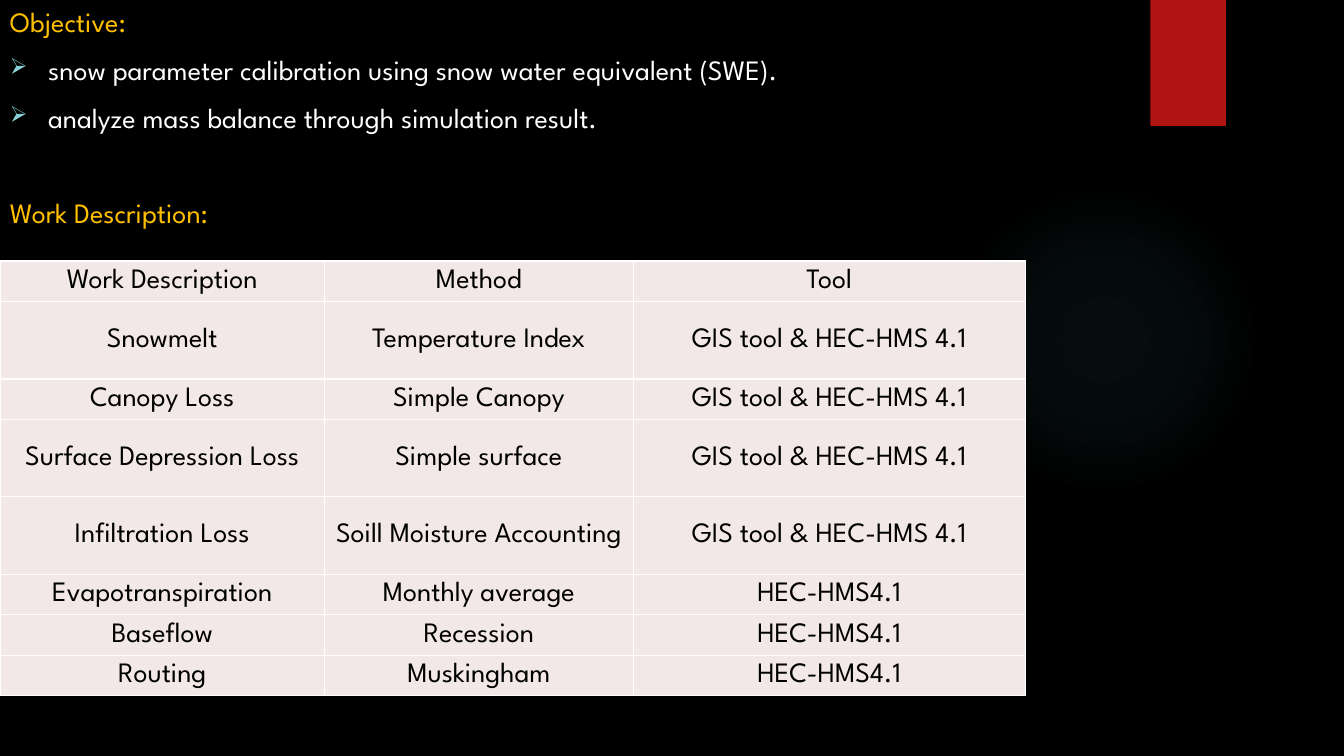
from dataclasses import dataclass

from pptx import Presentation
from pptx.dml.color import RGBColor
from pptx.enum.shapes import MSO_SHAPE
from pptx.enum.text import MSO_ANCHOR, PP_ALIGN
from pptx.oxml import parse_xml
from pptx.oxml.ns import nsdecls
from pptx.util import Emu, Pt

PX = 9144
FONT = "League Spartan"
TEXT_SIZE = Pt(20)
BLACK = RGBColor(0x00, 0x00, 0x00)
WHITE = RGBColor(0xFF, 0xFF, 0xFF)
GOLD = RGBColor(0xFF, 0xC0, 0x00)
RED = RGBColor(0xB0, 0x15, 0x13)
TEAL = RGBColor(0x50, 0xB9, 0xC1)
PALE_TEAL = RGBColor(0x8A, 0xD0, 0xD6)
PALE_ROSE = RGBColor(0xF2, 0xE8, 0xE7)
ELLIPSE = MSO_SHAPE.OVAL
RECTANGLE = MSO_SHAPE.RECTANGLE
CENTER = PP_ALIGN.CENTER
MIDDLE = MSO_ANCHOR.MIDDLE

BULLET_INDENT = 38
CELL_MARGIN = 1
COLUMN_WIDTHS = (322, 306, 389)
LOW_ROW, HIGH_ROW = 40, 77
GLOW_STOPS = ((0, 7), (36, 6), (69, 0))
MAPPED_TOOL = "GIS tool & HEC-HMS 4.1"
MODEL_TOOL = "HEC-HMS4.1"


@dataclass
class Line:
    text: str
    color: RGBColor
    space_before: int
    bulleted: bool = False


@dataclass
class Task:
    description: str
    method: str
    tool: str
    height: int = LOW_ROW


LINES = (
    Line("Objective:", GOLD, 0),
    Line("snow parameter calibration using snow water equivalent (SWE).", WHITE, 10, True),
    Line("analyze mass balance through simulation result.", WHITE, 10, True),
    Line("Work Description:", GOLD, 44),
)
TASKS = (
    Task("Work Description", "Method", "Tool"),
    Task("Snowmelt", "Temperature Index", MAPPED_TOOL, HIGH_ROW),
    Task("Canopy Loss", "Simple Canopy", MAPPED_TOOL),
    Task("Surface Depression Loss", "Simple surface", MAPPED_TOOL, HIGH_ROW),
    Task("Infiltration Loss", "Soill Moisture Accounting", MAPPED_TOOL, HIGH_ROW),
    Task("Evapotranspiration", "Monthly average", MODEL_TOOL),
    Task("Baseflow", "Recession", MODEL_TOOL),
    Task("Routing", "Muskingham", MODEL_TOOL),
)


def px(length: int) -> Emu:
    return Emu(length * PX)


def add_span(para, text: str, color: RGBColor) -> None:
    span = para.add_run()
    span.text = text
    span.font.name = FONT
    span.font.size = TEXT_SIZE
    span.font.color.rgb = color


def add_plain_shape(page, kind, left: int, top: int, width: int, height: int):
    shape = page.shapes.add_shape(kind, px(left), px(top), px(width), px(height))
    shape.shadow.inherit = False
    shape.line.fill.background()
    return shape


def add_glow(page) -> None:
    glow = add_plain_shape(page, ELLIPSE, 941, 183, 308, 308)
    stops = "".join(
        f'<a:gs pos="{position * 1000}"><a:srgbClr val="{TEAL}">'
        f'<a:alpha val="{opacity * 1000}"/></a:srgbClr></a:gs>'
        for position, opacity in GLOW_STOPS
    )
    gradient = parse_xml(
        f'<a:gradFill {nsdecls("a")}><a:gsLst>{stops}</a:gsLst><a:path path="circle">'
        '<a:fillToRect l="50000" t="50000" r="50000" b="50000"/></a:path></a:gradFill>'
    )
    glow.element.spPr.insert(2, gradient)


def add_bullet(para) -> None:
    properties = para._p.get_or_add_pPr()
    properties.set("marL", str(px(BULLET_INDENT)))
    properties.set("indent", str(-px(BULLET_INDENT)))
    for markup in (
        f'<a:buClr {nsdecls("a")}><a:srgbClr val="{PALE_TEAL}"/></a:buClr>',
        f'<a:buSzPct {nsdecls("a")} val="80000"/>',
        f'<a:buChar {nsdecls("a")} char="➢"/>',
    ):
        properties.append(parse_xml(markup))


def add_objectives(page) -> None:
    box = page.shapes.add_textbox(0, 0, px(1333), px(750))
    frame = box.text_frame
    frame.word_wrap = True
    for index, line in enumerate(LINES):
        para = frame.add_paragraph() if index else frame.paragraphs[0]
        if line.bulleted:
            add_bullet(para)
        para.space_before = Pt(line.space_before)
        add_span(para, line.text, line.color)


def format_cell(cell, text: str) -> None:
    cell.margin_left = cell.margin_right = cell.margin_top = px(CELL_MARGIN)
    cell.margin_bottom = 0
    cell.vertical_anchor = MIDDLE
    properties = cell._tc.get_or_add_tcPr()
    for side in ("lnL", "lnR", "lnT", "lnB"):
        properties.append(parse_xml(
            f'<a:{side} {nsdecls("a")} w="{Pt(1)}"><a:solidFill>'
            f'<a:srgbClr val="{WHITE}"/></a:solidFill></a:{side}>'
        ))
    cell.fill.solid()
    cell.fill.fore_color.rgb = PALE_ROSE
    para = cell.text_frame.paragraphs[0]
    para.alignment = CENTER
    add_span(para, text, BLACK)


def add_work_table(page) -> None:
    height = sum(task.height for task in TASKS)
    table = page.shapes.add_table(
        len(TASKS), len(COLUMN_WIDTHS), 0, px(259), px(sum(COLUMN_WIDTHS)), px(height)
    ).table
    table.first_row = False
    table.horz_banding = False
    for column, width in zip(table.columns, COLUMN_WIDTHS):
        column.width = px(width)
    for row, task in zip(table.rows, TASKS):
        row.height = px(task.height)
        for cell, text in zip(row.cells, (task.description, task.method, task.tool)):
            format_cell(cell, text)


def main() -> None:
    deck = Presentation()
    deck.slide_width, deck.slide_height = px(1333), px(750)
    page = deck.slides.add_slide(deck.slide_layouts.get_by_name("Blank"))
    page.background.fill.solid()
    page.background.fill.fore_color.rgb = BLACK
    add_glow(page)
    ribbon = add_plain_shape(page, RECTANGLE, 1141, 0, 75, 125)
    ribbon.fill.solid()
    ribbon.fill.fore_color.rgb = RED
    add_objectives(page)
    add_work_table(page)
    deck.save("out.pptx")


if __name__ == "__main__":
    main()
